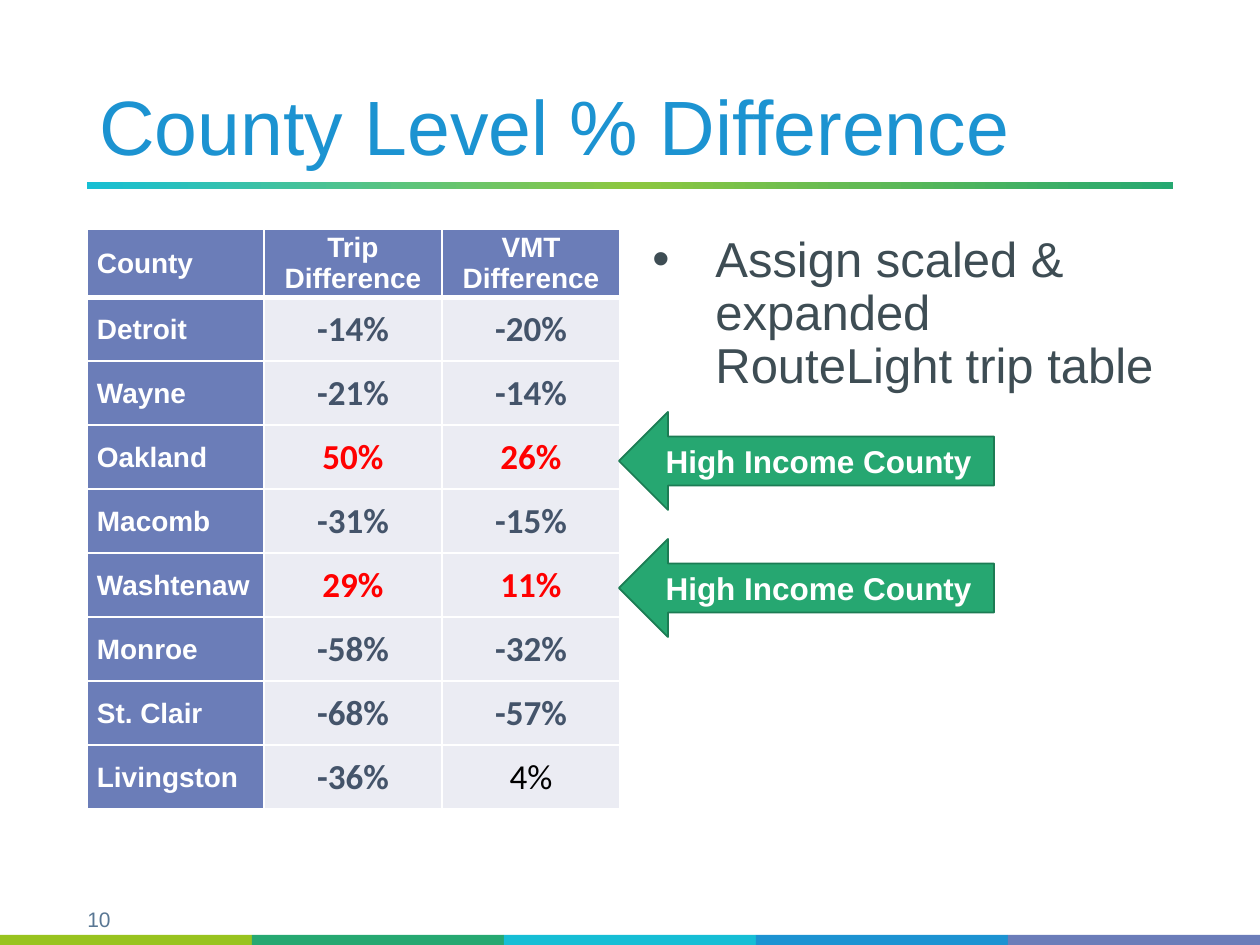
import copy

import lxml.etree
import pptx
import pptx.dml.color
import pptx.enum.shapes
import pptx.enum.text
import pptx.oxml
import pptx.oxml.ns
import pptx.util

RGB = pptx.dml.color.RGBColor
SHAPES = pptx.enum.shapes.MSO_SHAPE
ALIGN = pptx.enum.text.PP_ALIGN
ANCHOR = pptx.enum.text.MSO_ANCHOR

WHITE = RGB(0xFF, 0xFF, 0xFF)
BLACK = RGB(0x00, 0x00, 0x00)
RED = RGB(0xFF, 0x00, 0x00)
SLATE = RGB(0x44, 0x54, 0x6A)
BODY_GREY = RGB(0x3E, 0x4D, 0x54)
NUMBER_BLUE = RGB(0x59, 0x77, 0x94)
TITLE_BLUE = RGB(0x1C, 0x93, 0xD1)
PURPLE = RGB(0x6B, 0x7D, 0xB8)
PALE = RGB(0xEB, 0xEC, 0xF3)
GREEN = RGB(0x26, 0xA7, 0x71)
DARK_GREEN = RGB(0x1C, 0x7C, 0x54)
RULE_COLORS = [RGB(0x16, 0xBF, 0xD4), RGB(0x8D, 0xC7, 0x3F), RGB(0x26, 0xA8, 0x71)]
STRIP_COLORS = [RGB(0x98, 0xC3, 0x1F), RGB(0x26, 0xA8, 0x71), RGB(0x16, 0xBE, 0xD5),
                RGB(0x1C, 0x93, 0xD2), RGB(0x6B, 0x7D, 0xB9)]

HEADER = ["County", "Trip Difference", "VMT Difference"]
COUNTIES = [
    ("Detroit", -14, -20), ("Wayne", -21, -14), ("Oakland", 50, 26), ("Macomb", -31, -15),
    ("Washtenaw", 29, 11), ("Monroe", -58, -32), ("St. Clair", -68, -57), ("Livingston", -36, 4),
]
HIGH_INCOME = {"Oakland", "Washtenaw"}


def px(length):
    return pptx.util.Emu(round(length * 914400 / 126))


class SlideBuilder:
    font = "Arial"

    def __init__(self, deck):
        self.page = deck.slides.add_slide(deck.slide_layouts[6])

    def add_span(self, para, text, size, color, bold=False, font=None):
        span = para.add_run()
        span.text = text
        span.font.name = font or self.font
        span.font.size = pptx.util.Pt(size)
        span.font.bold = bold
        span.font.color.rgb = color

    def text(self, place, text, size, color, anchor=ANCHOR.TOP, align=ALIGN.LEFT,
             line_spacing=None, bullet_indent=0):
        box = self.page.shapes.add_textbox(*map(px, place))
        box.text_frame.word_wrap = True
        box.text_frame.vertical_anchor = anchor
        para = box.text_frame.paragraphs[0]
        para.alignment = align
        para.line_spacing = line_spacing
        if bullet_indent:
            props = para._p.get_or_add_pPr()
            props.set("marL", str(px(bullet_indent)))
            props.set("indent", str(-px(bullet_indent)))
            lxml.etree.SubElement(props, pptx.oxml.ns.qn("a:buFont"), typeface=self.font)
            lxml.etree.SubElement(props, pptx.oxml.ns.qn("a:buChar"), char="•")
        self.add_span(para, text, size, color)

    def shape(self, kind, place, fill=None, line=None):
        shape = self.page.shapes.add_shape(kind, *map(px, place))
        shape.shadow.inherit = False
        if fill is not None:
            shape.fill.solid()
            shape.fill.fore_color.rgb = fill
        if line is None:
            shape.line.fill.background()
        else:
            shape.line.color.rgb = line
            shape.line.width = pptx.util.Pt(1)
        return shape

    def gradient_rule(self, place, colors):
        fill = self.shape(SHAPES.RECTANGLE, place).fill
        fill.gradient()
        fill.gradient_angle = 0
        first = fill.gradient_stops[0]._gs
        for _ in colors[2:]:
            first.addnext(copy.deepcopy(first))
        for i, (stop, color) in enumerate(zip(fill.gradient_stops, colors)):
            stop.color.rgb = color
            stop.position = i / (len(colors) - 1)

    def arrow(self, place, label):
        frame = self.shape(SHAPES.LEFT_ARROW, place, GREEN, DARK_GREEN).text_frame
        frame.word_wrap = True
        frame.vertical_anchor = ANCHOR.MIDDLE
        para = frame.paragraphs[0]
        para.alignment = ALIGN.CENTER
        self.add_span(para, label, 18, WHITE, bold=True)

    def table(self, place, widths, heights):
        table = self.page.shapes.add_table(
            len(heights), len(widths), *map(px, place)).table
        for column, width in zip(table.columns, widths):
            column.width = px(width)
        for row, height in zip(table.rows, heights):
            row.height = px(height)
        return table

    def cell(self, cell, text, fill, centered, bottom_border=1, **style):
        cell.fill.solid()
        cell.fill.fore_color.rgb = fill
        cell.vertical_anchor = ANCHOR.MIDDLE
        cell.margin_left = px(1 if centered else 10)
        cell.margin_right = cell.margin_top = px(1)
        cell.margin_bottom = 0
        para = cell.text_frame.paragraphs[0]
        para.alignment = ALIGN.CENTER if centered else ALIGN.LEFT
        self.add_span(para, text, **style)
        props = cell._tc.get_or_add_tcPr()
        borders = {"lnL": 1, "lnR": 1, "lnT": 1, "lnB": bottom_border}
        for i, (side, width) in enumerate(borders.items()):
            props.insert(i, pptx.oxml.parse_xml(
                f'<a:{side} {pptx.oxml.ns.nsdecls("a")} w="{pptx.util.Pt(width)}">'
                f'<a:solidFill><a:srgbClr val="{WHITE}"/></a:solidFill></a:{side}>'))


def add_county_table(builder):
    table = builder.table((87, 229, 533, 577), [177, 178, 178], [65] + [64] * len(COUNTIES))
    label = {"size": 16, "color": WHITE, "bold": True}
    for c, heading in enumerate(HEADER):
        builder.cell(table.cell(0, c), heading, PURPLE, c > 0, bottom_border=3, **label)
    for r, (county, *differences) in enumerate(COUNTIES, start=1):
        builder.cell(table.cell(r, 0), county, PURPLE, False, **label)
        for c, value in enumerate(differences, start=1):
            high = county in HIGH_INCOME
            color = RED if high else SLATE if value < 0 else BLACK
            builder.cell(table.cell(r, c), f"{value}%", PALE, True, size=20, color=color,
                         bold=high or value < 0, font="Calibri")


def main():
    deck = pptx.Presentation()
    deck.slide_width, deck.slide_height = px(1260), px(945)
    builder = SlideBuilder(deck)

    builder.text((69, 900, 60, 38), "10", 12, NUMBER_BLUE, align=ALIGN.CENTER)
    builder.gradient_rule((87, 182, 1086, 7), RULE_COLORS)
    for i, color in enumerate(STRIP_COLORS):
        builder.shape(SHAPES.RECTANGLE, (i * 252, 935, 252, 10), color)
    builder.text((87, 14, 1086, 164), "County Level % Difference", 44, TITLE_BLUE,
                 anchor=ANCHOR.BOTTOM, line_spacing=0.9)
    add_county_table(builder)
    builder.text((640, 229, 533, 621), "Assign scaled & expanded RouteLight trip table",
                 28, BODY_GREY, line_spacing=0.9, bullet_indent=63)
    for top in (412, 539):
        builder.arrow((619, top, 375, 98), "High Income County")

    deck.save("out.pptx")


if __name__ == "__main__":
    main()
